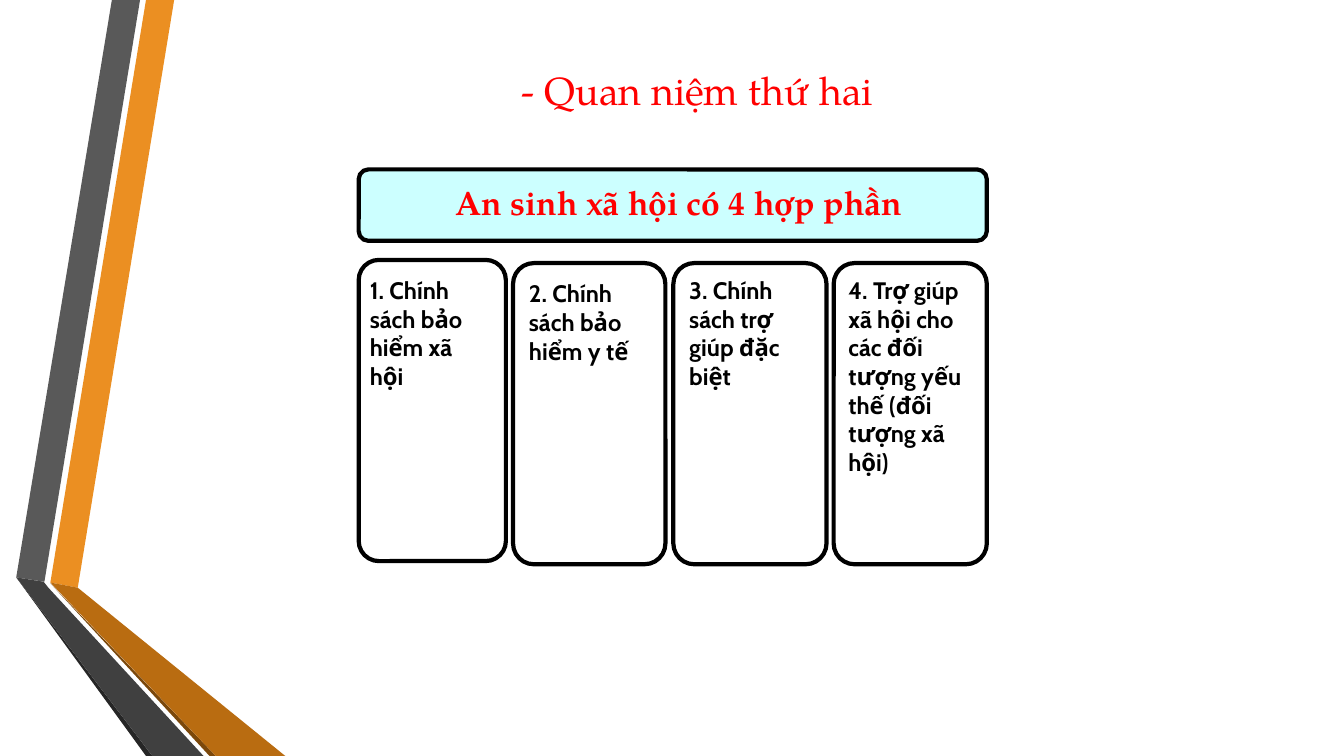
from dataclasses import dataclass

from pptx import Presentation
from pptx import util as u
from pptx.dml.color import RGBColor
from pptx.enum import shapes, text

SERIF, SANS = "TeX Gyre Pagella", "Cabin"
RED, BLACK, PALE_CYAN = "FF0000", "000000", "CCFFFF"


@dataclass
class Box:
    left: float
    top: float
    width: float
    height: float

    def lengths(self) -> list:
        return [u.Cm(value) for value in (self.left, self.top, self.width, self.height)]


@dataclass
class Ribbon:
    color: str
    points: list


@dataclass
class Label:
    content: str
    box: Box
    format: dict
    color: str
    alignment: text.PP_ALIGN = text.PP_ALIGN.LEFT
    anchor: text.MSO_ANCHOR = text.MSO_ANCHOR.TOP


@dataclass
class Card:
    frame: Box
    label: Label


TITLE_FORMAT = {"name": SERIF, "size": u.Pt(28), "bold": False}
HEADER_FORMAT = {"name": SERIF, "size": u.Pt(24), "bold": True}
CARD_FORMAT = {"name": SANS, "size": u.Pt(17), "bold": True}

RIBBONS = [
    Ribbon("EB8F22", [(1.27, 14.68), (1.96, 14.81), (4.39, 0), (3.68, 0)]),
    Ribbon("595959", [(3.53, 0), (2.82, 0), (0.41, 14.55), (1.12, 14.66)]),
    Ribbon("262626", [(0.41, 14.55), (3.68, 19.05), (3.84, 19.05)]),
    Ribbon("7B480B", [(1.27, 14.7), (5.28, 19.05), (5.44, 19.05)]),
    Ribbon("B96C11", [(1.27, 14.68), (5.44, 19.05), (7.19, 19.05), (1.96, 14.81)]),
    Ribbon("404040", [(5.13, 19.05), (1.22, 14.81), (1.1, 14.66), (0.41, 14.55),
                      (3.84, 19.05)]),
]

TITLE = Label("- Quan niệm thứ hai", Box(5.51, 1.47, 24.13, 1.57), TITLE_FORMAT, RED,
              text.PP_ALIGN.CENTER, text.MSO_ANCHOR.MIDDLE)
HEADER_FRAME = Box(9.04, 4.27, 15.83, 1.8)
HEADER = Label("An sinh xã hội có 4 hợp phần", Box(11.23, 4.47, 12.52, 1.27),
               HEADER_FORMAT, RED)


def card(content: str, frame: Box, label_box: Box) -> Card:
    return Card(frame, Label(content, label_box, CARD_FORMAT, BLACK))


CARDS = [
    card("1. Chính sách bảo hiểm xã hội",
         Box(9.04, 6.55, 3.71, 7.59), Box(9.07, 6.83, 3.38, 3.18)),
    card("2. Chính sách bảo hiểm y tế",
         Box(12.93, 6.63, 3.84, 7.59), Box(13.08, 6.91, 3.38, 2.44)),
    card("3. Chính sách trợ giúp đặc biệt",
         Box(16.97, 6.63, 3.86, 7.59), Box(17.12, 6.83, 3.38, 3.18)),
    card("4. Trợ giúp xã hội cho các đối tượng yếu thế (đối tượng xã hội)",
         Box(21.01, 6.63, 3.86, 7.59), Box(21.13, 6.83, 3.61, 6.07)),
]


def rgb(color: str) -> RGBColor:
    return RGBColor.from_string(color)


def draw_ribbon(slide, ribbon: Ribbon) -> None:
    start, *others = [(u.Cm(x), u.Cm(y)) for x, y in ribbon.points]
    builder = slide.shapes.build_freeform(*start)
    builder.add_line_segments(others, close=True)
    shape = builder.convert_to_shape()
    shape.shadow.inherit = False
    shape.fill.solid()
    shape.fill.fore_color.rgb = rgb(ribbon.color)
    shape.line.fill.background()


def draw_frame(slide, box: Box, fill: str | None = None) -> None:
    shape = slide.shapes.add_shape(shapes.MSO_SHAPE.ROUNDED_RECTANGLE, *box.lengths())
    shape.adjustments[0] = 0.137
    shape.shadow.inherit = False
    if fill:
        shape.fill.solid()
        shape.fill.fore_color.rgb = rgb(fill)
    else:
        shape.fill.background()
    shape.line.color.rgb = rgb(BLACK)
    shape.line.width = u.Pt(3)


def draw_label(slide, label: Label) -> None:
    frame = slide.shapes.add_textbox(*label.box.lengths()).text_frame
    frame.word_wrap = True
    frame.vertical_anchor = label.anchor
    paragraph = frame.paragraphs[0]
    paragraph.alignment = label.alignment
    run = paragraph.add_run()
    run.text = label.content
    for attribute, value in label.format.items():
        setattr(run.font, attribute, value)
    run.font.color.rgb = rgb(label.color)


def main() -> None:
    presentation = Presentation()
    presentation.slide_width = u.Cm(33.87)
    presentation.slide_height = u.Cm(19.05)
    slide = presentation.slides.add_slide(presentation.slide_layouts[6])

    # Folded ribbons on the left edge
    for ribbon in RIBBONS:
        draw_ribbon(slide, ribbon)

    # Title and header bar
    draw_label(slide, TITLE)
    draw_frame(slide, HEADER_FRAME, PALE_CYAN)
    draw_label(slide, HEADER)

    # The four components
    for component in CARDS:
        draw_frame(slide, component.frame)
        draw_label(slide, component.label)

    presentation.save("out.pptx")


if __name__ == "__main__":
    main()
